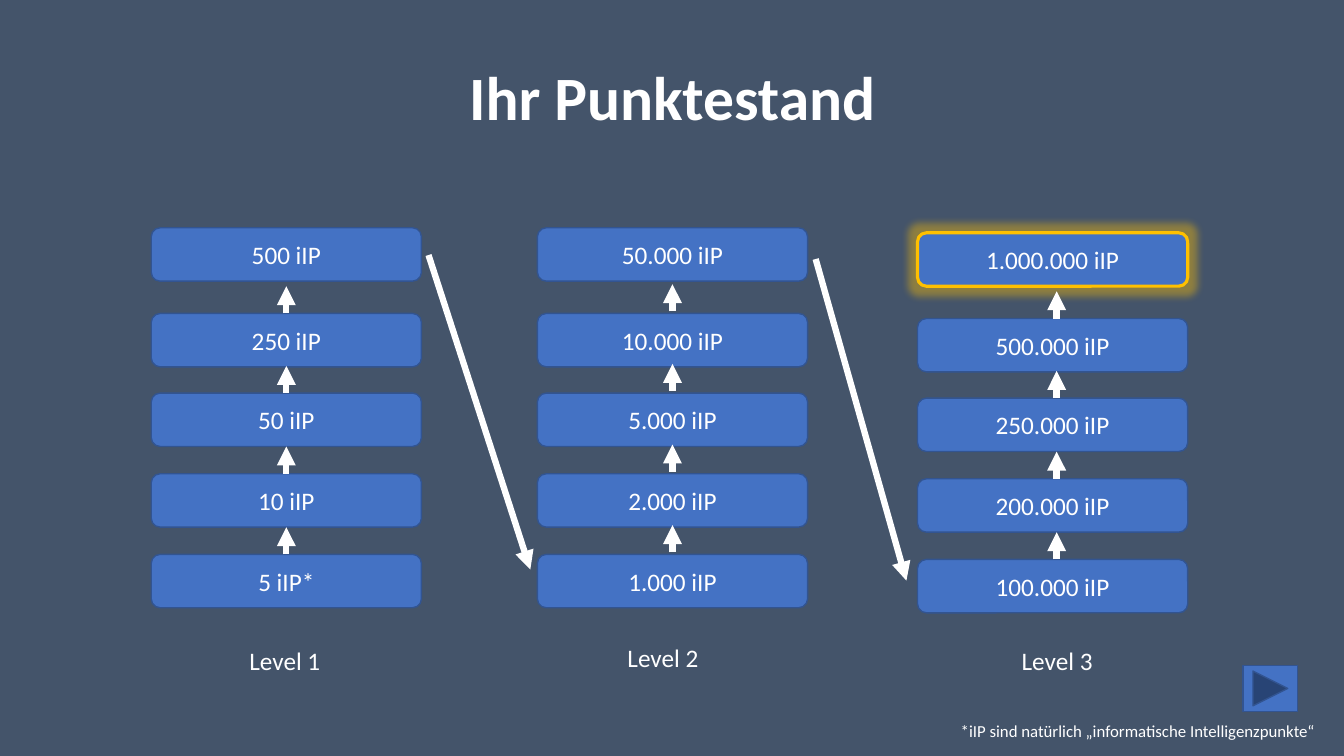
from dataclasses import dataclass

from lxml import etree
from pptx import Presentation
from pptx import util as u
from pptx.dml.color import RGBColor
from pptx.enum import shapes, text
from pptx.oxml import ns

PX = 9144  # EMU per px, 100 px to the inch
HUE = {"back": "44546A", "box": "4472C4", "edge": "325491",
       "gold": "FFC000", "white": "FFFFFF"}
KIND = shapes.MSO_SHAPE
ALIGN = text.PP_ALIGN

# Box sizes and the row offsets below the top box of a column
WIDE, HIGH = 268, 53
ROWS = (0, 85, 164, 244, 324)
RISE = 27


@dataclass
class Column:
    name: str
    left: int
    top: int
    mid: int    # x of the small arrows
    lift: int   # how far the arrows start above a box
    label: tuple[int, int]
    points: tuple[str, ...]  # from the top down


@dataclass
class Arrow:
    start: tuple[int, int]
    end: tuple[int, int]


COLUMNS = (
    Column("Level 1", 150, 226, 284, 0, (139, 635),
           ("500", "250", "50", "10", "5")),
    Column("Level 2", 533, 226, 667, 2, (514, 632),
           ("50.000", "10.000", "5.000", "2.000", "1.000")),
    Column("Level 3", 910, 231, 1048, 0, (905, 635),
           ("1.000.000", "500.000", "250.000", "200.000", "100.000")),
)
JUMPS = (Arrow((425, 253), (526, 565)), Arrow((809, 257), (899, 576)))


def tint(key: str) -> RGBColor:
    return RGBColor.from_string(HUE[key])


def scale(*sizes: int) -> list[int]:
    return [size * PX for size in sizes]


def add_tag(parent, name: str, **values: str):
    return etree.SubElement(parent, ns.qn(name), values)


def write(frame, words: str, size: int = 18, bold: bool = False,
          align=ALIGN.CENTER, anchor=text.MSO_ANCHOR.MIDDLE):
    """Fill a text frame with one line of white text."""
    frame.word_wrap = True
    frame.vertical_anchor = anchor
    line = frame.paragraphs[0]
    line.alignment = align
    run = line.add_run()
    run.text = words
    style = {"name": "Calibri", "size": u.Pt(size), "bold": bold}
    for key, value in style.items():
        setattr(run.font, key, value)
    run.font.color.rgb = tint("white")
    return line


def add_text(slide, place: tuple[int, ...], words: str, **style) -> None:
    frame = slide.shapes.add_textbox(*scale(*place)).text_frame
    write(frame, words, anchor=text.MSO_ANCHOR.TOP, **style)
    frame.auto_size = text.MSO_AUTO_SIZE.SHAPE_TO_FIT_TEXT


def add_block(slide, kind, place: tuple[int, ...],
              edge: str = "edge", width: float = 1):
    block = slide.shapes.add_shape(kind, *scale(*place))
    block.fill.solid()
    block.fill.fore_color.rgb = tint("box")
    block.line.color.rgb = tint(edge)
    block.line.width = u.Pt(width)
    block.shadow.inherit = False
    return block


def add_glow(block) -> None:
    effects = block._element.spPr.find(ns.qn("a:effectLst"))
    glow = add_tag(effects, "a:glow", rad=str(u.Pt(11)))
    color = add_tag(glow, "a:srgbClr", val=HUE["gold"])
    add_tag(color, "a:alpha", val="40000")


def add_arrow(slide, arrow: Arrow) -> None:
    line = slide.shapes.add_connector(
        shapes.MSO_CONNECTOR.STRAIGHT, *scale(*arrow.start, *arrow.end))
    line.line.color.rgb = tint("white")
    line.line.width = u.Pt(4.5)
    add_tag(line.line._get_or_add_ln(), "a:tailEnd", type="triangle")
    add_tag(line._element.spPr, "a:effectLst")


def add_column(slide, col: Column) -> None:
    for row, (step, points) in enumerate(zip(ROWS, col.points)):
        top = col.top + step
        goal = points == "1.000.000"
        look = {"edge": "gold", "width": 2.25} if goal else {}
        block = add_block(slide, KIND.ROUNDED_RECTANGLE,
                          (col.left, top, WIDE, HIGH), **look)
        star = "*" if points == "5" else ""
        write(block.text_frame, f"{points} iIP{star}")
        if goal:
            add_glow(block)
        if row:
            foot = top - col.lift
            add_arrow(slide, Arrow((col.mid, foot), (col.mid, foot - RISE)))
    add_text(slide, (*col.label, 287, 40), col.name)


def main() -> None:
    deck = Presentation()
    deck.slide_width, deck.slide_height = scale(1333, 750)
    slide = deck.slides.add_slide(deck.slide_layouts[6])
    slide.background.fill.solid()
    slide.background.fill.fore_color.rgb = tint("back")

    # Title
    title = slide.shapes.add_textbox(*scale(92, 48, 1150, 104))
    write(title.text_frame, "Ihr Punktestand", 44, True).line_spacing = 0.9

    # Levels and the jumps between them
    for col in COLUMNS:
        add_column(slide, col)
    for jump in JUMPS:
        add_arrow(slide, jump)

    # Footnote and button
    add_text(slide, (943, 710, 381, 30),
             "*iIP sind natürlich „informatische Intelligenzpunkte“",
             size=12, align=ALIGN.LEFT)
    add_block(slide, KIND.ACTION_BUTTON_FORWARD_OR_NEXT, (1233, 660, 54, 46))

    deck.save("out.pptx")


if __name__ == "__main__":
    main()
